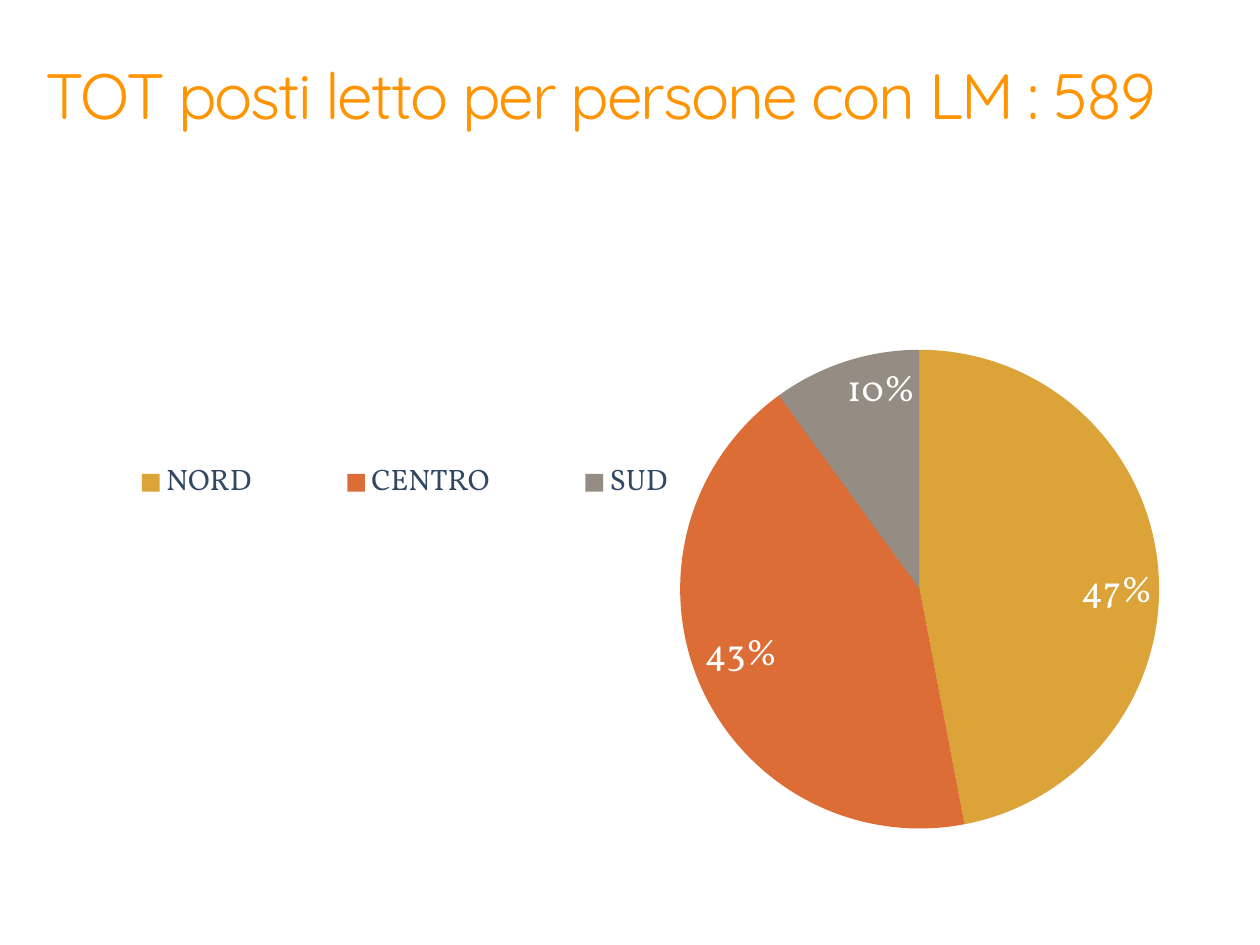
from dataclasses import dataclass

from lxml.etree import SubElement
from pptx import Presentation
from pptx.chart.chart import Chart
from pptx.chart.data import CategoryChartData
from pptx.dml.color import RGBColor
from pptx.enum.chart import XL_CHART_TYPE, XL_LABEL_POSITION, XL_LEGEND_POSITION
from pptx.enum.text import MSO_ANCHOR, MSO_AUTO_SIZE, PP_ALIGN
from pptx.oxml import parse_xml
from pptx.oxml.ns import nsdecls, qn
from pptx.slide import Slide
from pptx.util import Cm, Pt

ORANGE = RGBColor(0xFF, 0x93, 0x00)
NAVY = RGBColor(0x31, 0x48, 0x64)
WHITE = RGBColor(0xFF, 0xFF, 0xFF)
GOLD = RGBColor(0xD3, 0x8C, 0x07)
RUST = RGBColor(0xD4, 0x49, 0x06)
BROWN = RGBColor(0x55, 0x48, 0x38)


@dataclass
class Region:
    name: str
    share: int
    color: RGBColor
    opacity: int


@dataclass
class Area:
    """Fractions of the chart frame."""
    x: float
    y: float
    w: float
    h: float


REGIONS = [
    Region("NORD", 47, GOLD, 80),
    Region("CENTRO", 43, RUST, 80),
    Region("SUD", 10, BROWN, 62),
]
PIE_AREA = Area(0.56, 0, 0.44, 0.99)
LEGEND_AREA = Area(0, 0.21, 0.63, 0.13)


def layout_xml(area: Area, inner: bool = False):
    target = '<c:layoutTarget val="inner"/>' if inner else ""
    return parse_xml(
        f'<c:layout {nsdecls("c")}><c:manualLayout>{target}'
        '<c:xMode val="edge"/><c:yMode val="edge"/>'
        f'<c:x val="{area.x}"/><c:y val="{area.y}"/>'
        f'<c:w val="{area.w}"/><c:h val="{area.h}"/>'
        "</c:manualLayout></c:layout>"
    )


def remove_layout(element) -> None:
    for layout in element.findall(qn("c:layout")):
        element.remove(layout)


def add_title(slide: Slide, text: str) -> None:
    title = slide.shapes.title
    title.left, title.top = Cm(1.14), Cm(1.63)
    title.width, title.height = Cm(33.86), Cm(2.39)
    frame = title.text_frame
    frame.margin_left = frame.margin_right = Cm(0.15)
    frame.margin_top = frame.margin_bottom = Cm(0.15)
    frame.vertical_anchor = MSO_ANCHOR.MIDDLE
    frame.word_wrap = True
    frame.auto_size = MSO_AUTO_SIZE.NONE
    paragraph = frame.paragraphs[0]
    paragraph.alignment = PP_ALIGN.LEFT
    paragraph.line_spacing = 0.9
    run = paragraph.add_run()
    run.text = text
    run.font.name = "Quicksand"
    run.font.size = Pt(52)
    run.font.color.rgb = ORANGE
    run.font._element.set("spc", "-160")


def style_font(font, name: str, size: int, color: RGBColor) -> None:
    font.name = name
    font.size = Pt(size)
    font.color.rgb = color


def color_slices(chart: Chart) -> None:
    series = chart.plots[0].series[0]
    for index, region in enumerate(REGIONS):
        point_format = series.points[index].format
        point_format.fill.solid()
        point_format.fill.fore_color.rgb = region.color
        point_format.line.fill.background()
    slice_colors = series._element.iterfind(f'{qn("c:dPt")}//{qn("a:srgbClr")}')
    for slice_color, region in zip(slice_colors, REGIONS):
        SubElement(slice_color, qn("a:alpha")).set("val", str(region.opacity * 1000))


def add_legend(chart: Chart) -> None:
    chart.has_legend = True
    legend = chart.legend
    legend.position = XL_LEGEND_POSITION.RIGHT
    legend.include_in_layout = True
    style_font(legend.font, "Vollkorn", 24, NAVY)
    remove_layout(legend._element)
    legend._element.find(qn("c:overlay")).addprevious(layout_xml(LEGEND_AREA))


def add_pie(slide: Slide) -> None:
    data = CategoryChartData()
    data.categories = [region.name for region in REGIONS]
    data.add_series("Posti letto", [region.share for region in REGIONS])
    chart = slide.shapes.add_chart(
        XL_CHART_TYPE.PIE, Cm(1.6), Cm(10.03), Cm(31.75), Cm(13.87), data
    ).chart
    chart.has_title = False
    style_font(chart.font, "Noto Sans", 10, NAVY)
    plot = chart.plots[0]
    plot.vary_by_categories = True
    color_slices(chart)

    # Percentages inside the slices
    plot.has_data_labels = True
    labels = plot.data_labels
    labels.show_value = False
    labels.show_percentage = True
    labels.number_format = "0%"
    labels.number_format_is_linked = False
    labels.position = XL_LABEL_POSITION.INSIDE_END
    style_font(labels.font, "Vollkorn", 30, WHITE)

    # Pie on the right, legend in a row on the left
    plot_area = chart._chartSpace.find(f'.//{qn("c:plotArea")}')
    remove_layout(plot_area)
    plot_area.insert(0, layout_xml(PIE_AREA, inner=True))
    add_legend(chart)


def main() -> None:
    presentation = Presentation()
    presentation.slide_width = Cm(36.12)
    presentation.slide_height = Cm(27.1)
    slide = presentation.slides.add_slide(presentation.slide_layouts[5])
    add_pie(slide)
    add_title(slide, "TOT posti letto per persone con LM : 589")
    presentation.save("out.pptx")


if __name__ == "__main__":
    main()
